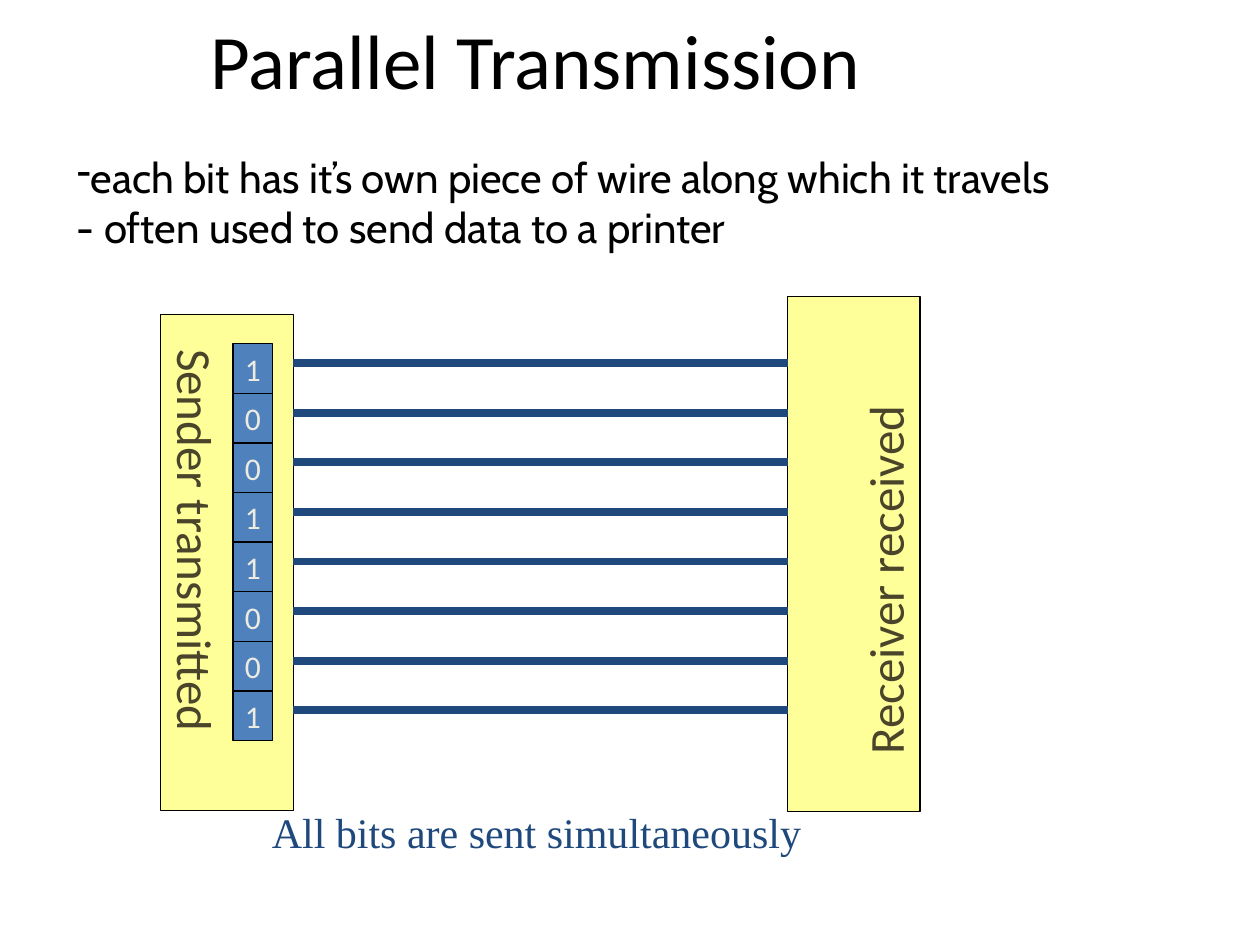
from lxml import etree
from pptx import Presentation
from pptx import util as u
from pptx.dml.color import RGBColor
from pptx.enum import shapes, text
from pptx.oxml import ns

COLOURS = {
    "black": "000000",
    "panel": "FFFF99",
    "label": "4A452A",
    "navy": "1F497D",
    "bit": "4F81BD",
    "digit": "EEECE1",
}
BITS = "10011001"
PITCH = 1.0  # cm between neighbouring bits and wires


def colour(name):
    return RGBColor.from_string(COLOURS[name])


def write(shape, *lines, size=24, font="Calibri", ink="black", align="LEFT",
          anchor="TOP", wrap=True, margins=(0.25, 0.13, 0.25, 0.13)):
    """Fill a shape with one paragraph per line; margins are in cm."""
    frame = shape.text_frame
    frame.word_wrap = wrap
    frame.vertical_anchor = text.MSO_ANCHOR[anchor]
    frame.margin_left, frame.margin_top, frame.margin_right, frame.margin_bottom = (
        u.Cm(margin) for margin in margins)
    for index, line in enumerate(lines):
        para = frame.add_paragraph() if index else frame.paragraphs[0]
        para.alignment = text.PP_ALIGN[align]
        span = para.add_run()
        span.text = line
        span.font.size = u.Pt(size)
        span.font.name = font
        span.font.color.rgb = colour(ink)
    return frame


def text_box(page, left, top, width, height, *lines, **style):
    box = page.shapes.add_textbox(*map(u.Cm, (left, top, width, height)))
    return write(box, *lines, **style)


def rectangle(page, left, top, width, height, fill):
    box = page.shapes.add_shape(
        shapes.MSO_SHAPE.RECTANGLE, *map(u.Cm, (left, top, width, height)))
    box.shadow.inherit = False
    box.fill.solid()
    box.fill.fore_color.rgb = colour(fill)
    box.line.color.rgb = colour("black")
    box.line.width = u.Pt(0.75)
    return box


def station(page, left, top, width, height, label, rotation, indent):
    """Draw an upright panel whose label runs along its height."""
    shift = (height - width) / 2
    panel = rectangle(page, left - shift, top + shift, height, width, "panel")
    panel.rotation = rotation
    write(panel, label, size=28, ink="label", anchor="BOTTOM",
          margins=(indent, 0.13, 0.25, 0.13))


def wires(page, left, top, width):
    for index in range(len(BITS)):
        level = u.Cm(top + index * PITCH)
        wire = page.shapes.add_connector(
            shapes.MSO_CONNECTOR.STRAIGHT,
            u.Cm(left), level, u.Cm(left + width), level)
        wire.line.color.rgb = colour("navy")
        wire.line.width = u.Pt(4.5)
        properties = wire._element.spPr
        etree.SubElement(properties, ns.qn("a:effectLst"))


def bit_column(page, left, top, width):
    for index, bit in enumerate(BITS):
        cell = rectangle(page, left, top + index * PITCH, width, PITCH, "bit")
        write(cell, bit, size=18, ink="digit", align="CENTER",
              anchor="MIDDLE", wrap=False)


def heading(page, left, top, width, height):
    text_box(page, left, top, width, height, "Parallel Transmission",
             size=44, align="CENTER", anchor="MIDDLE")


def facts(page, left, top, width, height):
    frame = text_box(
        page, left, top, width, height,
        "each bit has it’s own piece of wire along which it travels",
        "- often used to send data to a printer", font="Cabin")
    properties = frame.paragraphs[0]._p.get_or_add_pPr()
    etree.SubElement(properties, ns.qn("a:buFontTx"))
    etree.SubElement(properties, ns.qn("a:buChar"), char="-")


def diagram(page, left, top, width, height):
    """Draw sender, wires, bits and receiver inside the given box."""
    panel = 2.67
    station(page, left + width - panel, top, panel, height,
            "Receiver received", 270, 1.15)
    station(page, left, top + 0.37, panel, 10, "Sender transmitted", 90, 0.7)
    wires(page, left + panel, top + 1.35, width - 2 * panel)
    bit_column(page, left + 1.46, top + 0.96, 0.8)


def caption(page, left, top, width, height):
    text_box(page, left, top, width, height, "All bits are sent simultaneously",
             font="Times New Roman", ink="navy")


def main():
    deck = Presentation()
    deck.slide_width, deck.slide_height = u.Cm(25.4), u.Cm(19.05)
    page = deck.slides.add_slide(deck.slide_layouts[6])
    heading(page, 0, 0.13, 21.6, 2.1)
    facts(page, 1.3, 2.92, 22.8, 3.3)
    diagram(page, 3.24, 5.97, 15.31, 10.39)
    caption(page, 5.23, 16.13, 15.27, 1.27)
    deck.save("out.pptx")


if __name__ == "__main__":
    main()
